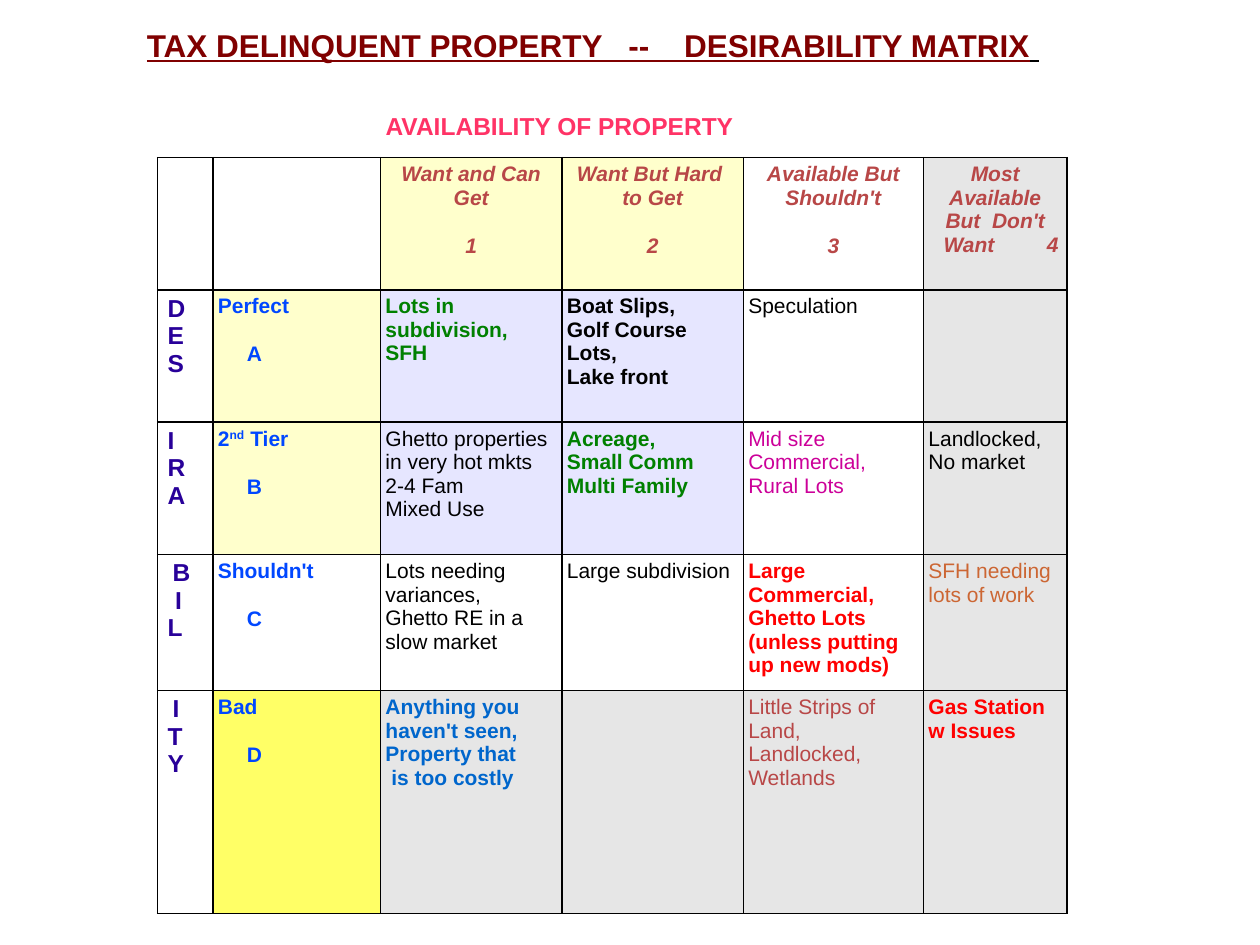
import pptx
import pptx.util
import pptx.dml.color
import pptx.enum.text
import pptx.oxml
import pptx.oxml.ns

Inches, Pt = pptx.util.Inches, pptx.util.Pt
RGB = pptx.dml.color.RGBColor
ALIGN = pptx.enum.text.PP_ALIGN
ANCHOR = pptx.enum.text.MSO_ANCHOR
NS = pptx.oxml.ns.nsdecls("a")

BLACK = RGB(0, 0, 0)
MAROON = RGB(0x80, 0, 0)
PINK = RGB(0xFF, 0x33, 0x66)
BRICK = RGB(0xB8, 0x47, 0x47)
INDIGO = RGB(0x28, 0, 0x99)
BLUE = RGB(0, 0x47, 0xFF)
AZURE = RGB(0, 0x66, 0xCC)
GREEN = RGB(0, 0x80, 0)
PURPLE = RGB(0xCC, 0, 0x99)
RED = RGB(0xFF, 0, 0)
RUST = RGB(0xCC, 0x66, 0x33)
CREAM = RGB(0xFF, 0xFF, 0xCC)
YELLOW = RGB(0xFF, 0xFF, 0x66)
LILAC = RGB(0xE6, 0xE6, 0xFF)
GREY = RGB(0xE6, 0xE6, 0xE6)


def add_run(para, text, color, size=12, bold=True, italic=False):
    run = para.add_run()
    run.text = text
    font = run.font
    font.name, font.size = "Arial", Pt(size)
    font.bold, font.italic = bold, italic
    font.color.rgb = color
    return run


def add_line(frame, first=False, indent=0, gap=0, align=ALIGN.LEFT):
    para = frame.paragraphs[0] if first else frame.add_paragraph()
    para.alignment = align
    para.space_before = Pt(gap)
    props = para._p.get_or_add_pPr()
    props.set("marL", "0")
    props.set("indent", str(Inches(indent)))
    return para


deck = pptx.Presentation()
deck.slide_width, deck.slide_height = Inches(10), Inches(7.5)
slide = deck.slides.add_slide(deck.slide_layouts[5])

# Column heading, held by the title placeholder
title = slide.shapes.title
title.left, title.top = Inches(2.96), Inches(0.83)
title.width, title.height = Inches(3.5), Inches(0.34)
title.text_frame.vertical_anchor = ANCHOR.MIDDLE
add_run(add_line(title.text_frame, True), "AVAILABILITY OF PROPERTY", PINK, 14)

# Underlined heading of the page
box = slide.shapes.add_textbox(Inches(0.58), Inches(0.16), Inches(8.25), Inches(0.4))
box.text_frame.word_wrap = True
para = add_line(box.text_frame, True, align=ALIGN.CENTER)
head = "TAX DELINQUENT PROPERTY   --    DESIRABILITY MATRIX"
add_run(para, head, MAROON, 18).font.underline = True
add_run(para, " ", BLACK, 18, italic=True).font.underline = True

# Matrix grid
wide = [0.44, 1.33, 1.44, 1.44, 1.43, 1.14]
high = [1.05] * 4 + [1.77]
table = slide.shapes.add_table(
    len(high), len(wide), Inches(1.25), Inches(1.25),
    Inches(sum(wide)), Inches(sum(high))).table
table.first_row = table.horz_banding = False
for col, size in zip(table.columns, wide):
    col.width = Inches(size)
for row, size in zip(table.rows, high):
    row.height = Inches(size)

# Fills by row, None for a clear cell
fills = [
    [None, None, CREAM, CREAM, None, GREY],
    [None, CREAM, LILAC, LILAC, None, GREY],
    [None, CREAM, LILAC, LILAC, None, GREY],
    [None, None, None, None, None, GREY],
    [None, YELLOW, GREY, GREY, GREY, GREY],
]
for r, shades in enumerate(fills):
    for c, shade in enumerate(shades):
        cell = table.cell(r, c)
        cell.margin_left = cell.margin_right = Inches(0.04)
        cell.margin_top = cell.margin_bottom = Inches(0.04)
        props = cell._tc.get_or_add_tcPr()
        for side in ("lnL", "lnR", "lnT", "lnB"):
            props.append(pptx.oxml.parse_xml(
                f'<a:{side} {NS} w="{Pt(1)}"><a:solidFill>'
                f'<a:srgbClr val="{BLACK}"/></a:solidFill></a:{side}>'))
        if shade is None:
            cell.fill.background()
        else:
            cell.fill.solid()
            cell.fill.fore_color.rgb = shade

# Availability headers, the number set one line below the name
heads = [
    (["Want and Can Get"], "1"),
    (["Want But Hard ", "to Get"], "2"),
    (["Available But Shouldn't"], "3"),
    (["Most Available", "But  Don't"], None),
]
for c, (lines, mark) in enumerate(heads, 2):
    frame = table.cell(0, c).text_frame
    for i, text in enumerate(lines):
        para = add_line(frame, i == 0, align=ALIGN.CENTER)
        add_run(para, text, BRICK, italic=True)
    if mark:
        para = add_line(frame, gap=14, align=ALIGN.CENTER)
        add_run(para, mark, BRICK, italic=True)
    else:
        para = add_line(frame, indent=0.12)
        para._p.get_or_add_pPr().append(pptx.oxml.parse_xml(
            f'<a:tabLst {NS}><a:tab pos="{Inches(0.84)}" algn="l"/></a:tabLst>'))
        add_run(para, "Want\t4", BRICK, italic=True)

# Desirability letters and tier labels
tiers = [
    ("DES", (0.04, 0.04, 0.04), "Perfect", "A"),
    ("IRA", (0.04, 0.04, 0.04), "2nd Tier", "B"),
    ("BIL", (0.08, 0.1, 0.04), "Shouldn't", "C"),
    ("ITY", (0.08, 0.04, 0.04), "Bad", "D"),
]
for r, (word, shifts, name, mark) in enumerate(tiers, 1):
    frame = table.cell(r, 0).text_frame
    for i, (letter, shift) in enumerate(zip(word, shifts)):
        add_run(add_line(frame, i == 0, shift), letter, INDIGO, 14)
    frame = table.cell(r, 1).text_frame
    para = add_line(frame, True)
    start, high_text, rest = name.partition("nd")
    add_run(para, start, BLUE)
    if high_text:
        run = add_run(para, high_text, BLUE)
        run._r.get_or_add_rPr().set("baseline", "30000")
        add_run(para, rest, BLUE)
    add_run(add_line(frame, indent=0.23, gap=14), mark, BLUE)

# Property kinds: row, column, colour, bold, lines
kinds = [
    (1, 2, GREEN, True, ["Lots in subdivision,", "SFH"]),
    (1, 3, BLACK, True, ["Boat Slips,", "Golf Course", "Lots,", "Lake front"]),
    (1, 4, BLACK, False, ["Speculation"]),
    (2, 2, BLACK, False,
     ["Ghetto properties in very hot mkts", "2-4 Fam", "Mixed Use"]),
    (2, 3, GREEN, True, ["Acreage,", "Small Comm", "Multi Family"]),
    (2, 4, PURPLE, False, ["Mid size Commercial,", "Rural Lots"]),
    (2, 5, BLACK, False, ["Landlocked,", "No market"]),
    (3, 2, BLACK, False, ["Lots needing variances,", "Ghetto RE in a slow market"]),
    (3, 3, BLACK, False, ["Large subdivision"]),
    (3, 4, RED, True,
     ["Large Commercial, Ghetto Lots", "(unless putting up new mods)"]),
    (3, 5, RUST, False, ["SFH needing lots of work"]),
    (4, 2, AZURE, True,
     ["Anything you haven't seen, Property that", " is too costly"]),
    (4, 4, BRICK, False, ["Little Strips of Land,", "Landlocked, Wetlands"]),
    (4, 5, RED, True, ["Gas Station w Issues"]),
]
for r, c, color, bold, lines in kinds:
    frame = table.cell(r, c).text_frame
    for i, text in enumerate(lines):
        add_run(add_line(frame, i == 0), text, color, bold=bold)

deck.save("out.pptx")
